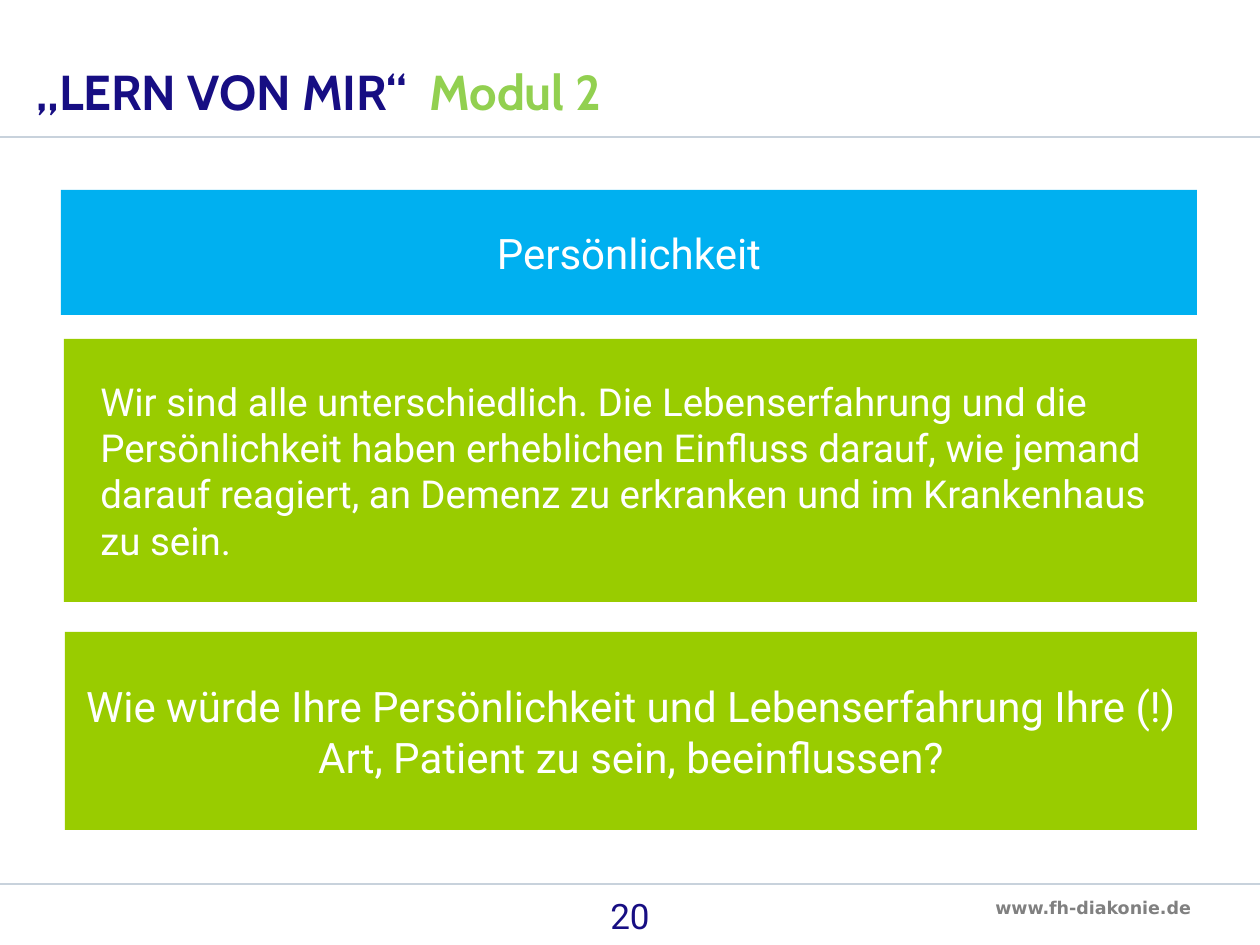
"""Build the slide on personality from module 2 of the course."""
import pptx
import pptx.util
import pptx.dml.color
import pptx.enum.shapes
import pptx.enum.text
from lxml import etree

ANCHOR = pptx.enum.text.MSO_ANCHOR
ALIGN = pptx.enum.text.PP_ALIGN
COLORS = {"navy": "170E83", "lime": "92D050", "green": "99CC00", "blue": "00B0F0",
          "rule": "C8D2DC", "grey": "808080", "white": "FFFFFF"}
WIDTH, HEIGHT = 1260, 945
RIGHT = 1197

RULES = [137, 884]
PANELS = [
    ("Persönlichkeit", 61, 190, 125, "blue", 24, ALIGN.CENTER, 0),
    ("Wir sind alle unterschiedlich. Die Lebenserfahrung und die Persönlichkeit "
     "haben erheblichen Einfluss darauf, wie jemand darauf reagiert, an Demenz "
     "zu erkranken und im Krankenhaus zu sein.",
     64, 339, 263, "green", 22, ALIGN.LEFT, 24),
    ("Wie würde Ihre Persönlichkeit und Lebenserfahrung Ihre (!) Art, Patient "
     "zu sein, beeinflussen?", 65, 632, 198, "green", 24, ALIGN.CENTER, 0),
]
TITLE = [("„LERN VON MIR“  ", "navy"), ("Modul 2", "lime")]
PAGE = [("20", "navy")]
SITE = [("www.fh-diakonie.de", "grey")]


def px(n):
    return pptx.util.Emu(round(n * 914400 / 126))


def rgb(name):
    return pptx.dml.color.RGBColor.from_string(COLORS[name])


def write(sp, runs, font, size, bold=False, align=ALIGN.LEFT, anchor=ANCHOR.TOP, wrap=True):
    tf = sp.text_frame
    tf.word_wrap = wrap
    tf.vertical_anchor = anchor
    p = tf.paragraphs[0]
    p.alignment = align
    p.font.name = font
    p.font.size = pptx.util.Pt(size)
    p.font.bold = bold
    for text, color in runs:
        r = p.add_run()
        r.text = text
        r.font.color.rgb = rgb(color)
    return p


def add_rule(s, y):
    line = s.shapes.add_connector(pptx.enum.shapes.MSO_CONNECTOR.STRAIGHT,
                                  px(0), px(y), px(WIDTH), px(y))
    line.line.color.rgb = rgb("rule")
    line.line.width = pptx.util.Pt(1.5)
    etree.SubElement(line._element.spPr, pptx.oxml.ns.qn("a:effectLst"))


def add_panel(s, text, left, top, height, fill, size, align, indent):
    sp = s.shapes.add_shape(pptx.enum.shapes.MSO_SHAPE.RECTANGLE,
                            px(left), px(top), px(RIGHT - left), px(height))
    sp.shadow.inherit = False
    sp.fill.solid()
    sp.fill.fore_color.rgb = rgb(fill)
    sp.line.fill.background()
    p = write(sp, [(text, "white")], "Roboto", size, align=align, anchor=ANCHOR.MIDDLE)
    if indent:
        p._p.get_or_add_pPr().set("marL", str(px(indent)))


def add_text(s, box, *args, **kwargs):
    sp = s.shapes.add_textbox(*map(px, box))
    return sp, write(sp, *args, **kwargs)


def main():
    prs = pptx.Presentation()
    prs.slide_width, prs.slide_height = px(WIDTH), px(HEIGHT)
    s = prs.slides.add_slide(prs.slide_layouts[6])
    sp, p = add_text(s, (983, 891, 224, 34), SITE, "DejaVu Sans", 10, bold=True, wrap=False)
    sp.text_frame.auto_size = pptx.enum.text.MSO_AUTO_SIZE.SHAPE_TO_FIT_TEXT
    for y in RULES:
        add_rule(s, y)
    for panel in PANELS:
        add_panel(s, *panel)
    add_text(s, (483, 888, 294, 57), PAGE, "Roboto", 20, align=ALIGN.CENTER)
    sp, p = add_text(s, (24, 54, 840, 73), TITLE, "Cabin", 28, bold=True, anchor=ANCHOR.BOTTOM)
    p.line_spacing = 0.9
    prs.save("out.pptx")


if __name__ == "__main__":
    main()
